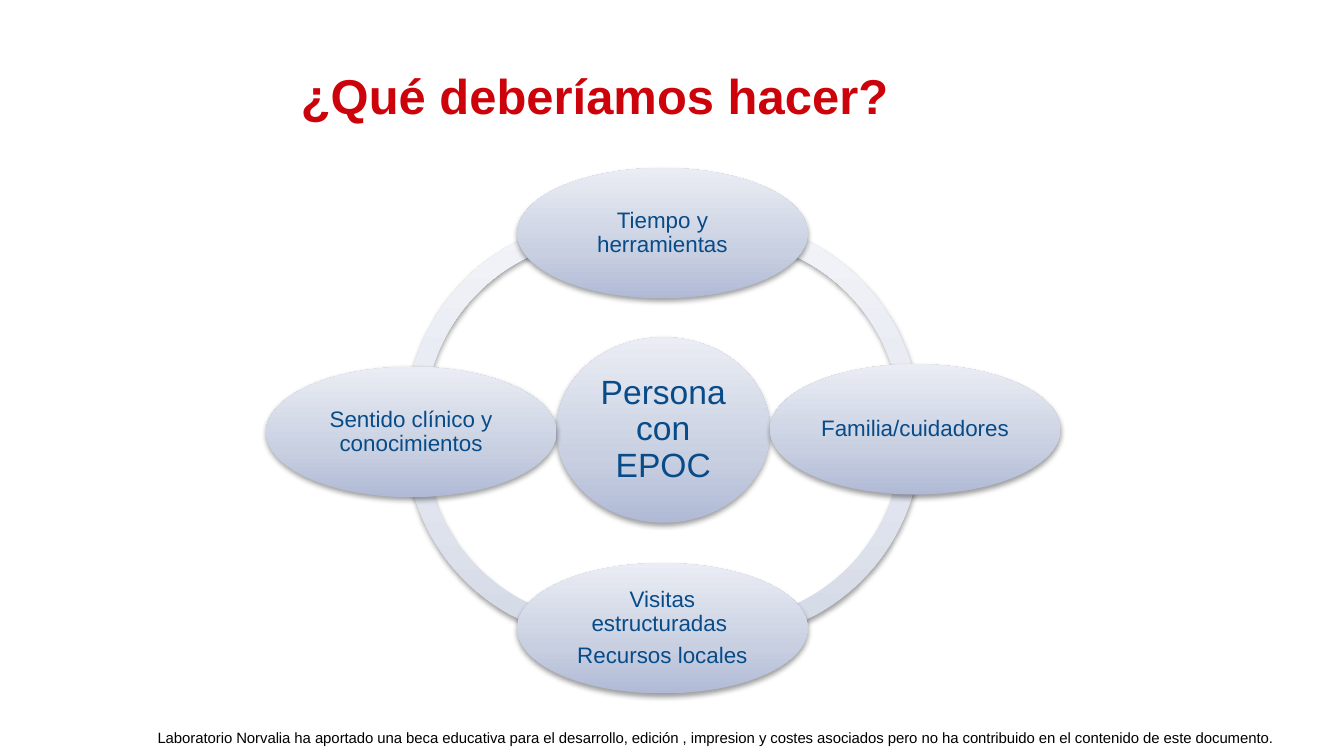
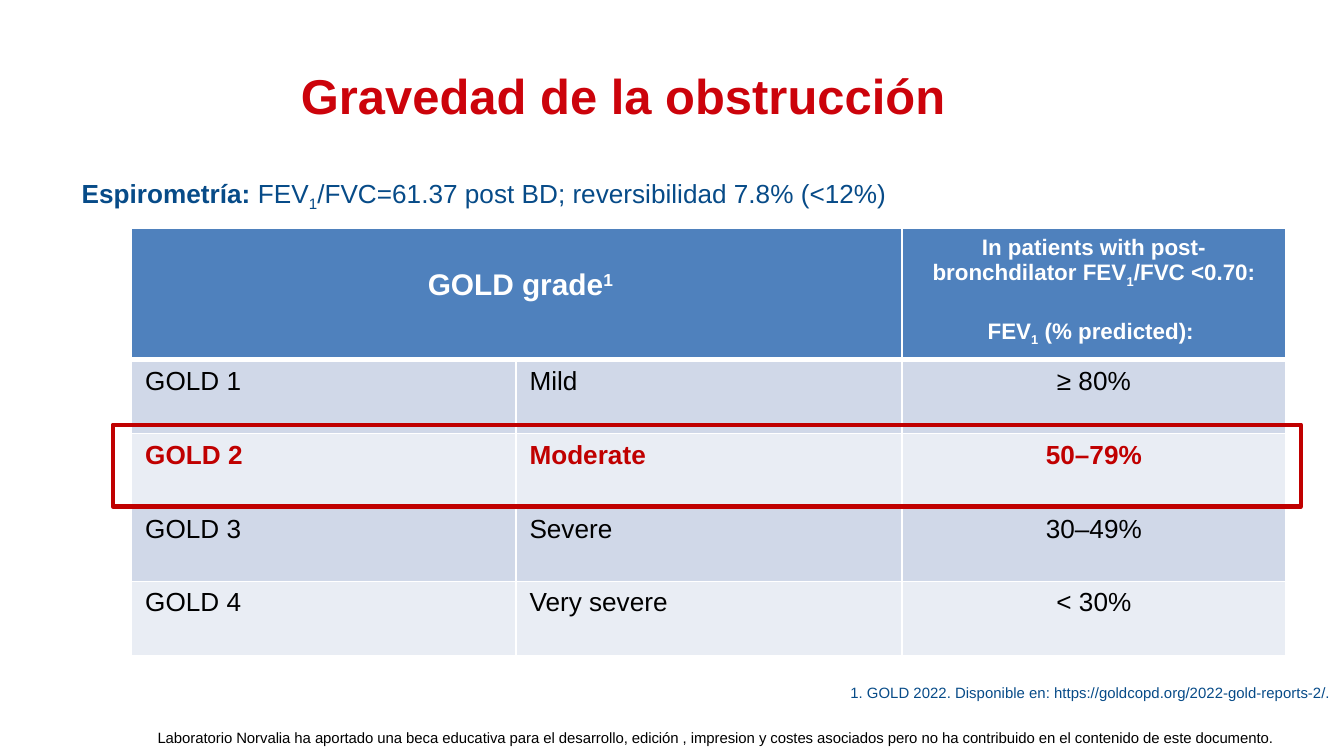
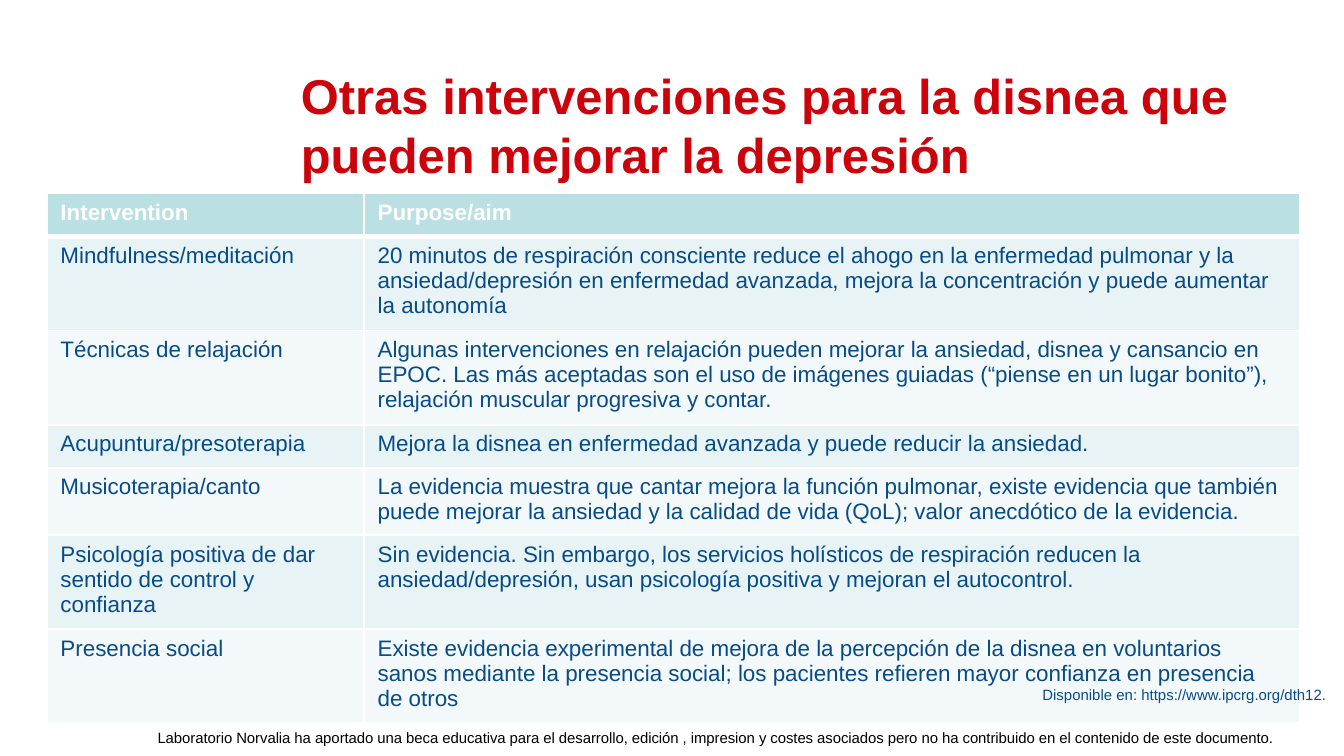
from dataclasses import dataclass

from pptx import Presentation
from pptx import util as u
from pptx.dml.color import RGBColor
from pptx.enum import shapes, text
from pptx.oxml import parse_xml
from pptx.oxml.ns import nsdecls, qn

FONT = "Arial"
NAVY, RED, DARK_RED = "074B88", "CC030B", "C00000"
BLACK, WHITE = "000000", "FFFFFF"
LEFT, CENTER, RIGHT = text.PP_ALIGN.LEFT, text.PP_ALIGN.CENTER, text.PP_ALIGN.RIGHT
SUB, SUPER = -25, 30
RING_STOPS = ((0, "D4D9E7"), (35, "E0E4EE"), (100, "F3F4F9"))
BUBBLE_STOPS = ((0, "B0BAD6"), (35, "C8CFE1"), (100, "EAEDF4"))
FOOTER = ("Laboratorio Norvalia ha aportado una beca educativa para el desarrollo, edición , "
          "impresion y costes asociados pero no ha contribuido en el contenido de este documento. ")


@dataclass(frozen=True)
class Span:
    text: str
    size: float
    color: str = NAVY
    bold: bool = False
    baseline: int = 0
    spacing: int = 0


@dataclass(frozen=True)
class Para:
    spans: tuple[Span, ...]
    align: text.PP_ALIGN = LEFT
    line: float | None = None
    before: float | None = None
    after: float | None = None


@dataclass(frozen=True)
class Area:
    left: float
    top: float
    width: float
    height: float

    def lengths(self):
        return [u.Inches(n) for n in (self.left, self.top, self.width, self.height)]


@dataclass(frozen=True)
class Arc:
    left: float
    top: float
    start: float
    end: float


@dataclass(frozen=True)
class Bubble:
    area: Area
    labels: tuple[str, ...]
    size: float = 12
    inset: float = 0.02


@dataclass(frozen=True)
class Cell:
    paras: tuple[Para, ...]
    fill: str
    margin_top: float = 0.05


def rgb(color: str) -> RGBColor:
    return RGBColor.from_string(color)


def write(frame, paras: tuple[Para, ...]) -> None:
    for index, item in enumerate(paras):
        para = frame.paragraphs[0] if index == 0 else frame.add_paragraph()
        para.alignment = item.align
        if item.line is not None:
            para.line_spacing = item.line
        if item.before is not None:
            para.space_before = u.Pt(item.before)
        if item.after is not None:
            para.space_after = u.Pt(item.after)
        for piece in item.spans:
            span = para.add_run()
            span.text = piece.text
            span.font.name = FONT
            span.font.size = u.Pt(piece.size)
            span.font.bold = piece.bold
            span.font.color.rgb = rgb(piece.color)
            properties = span.font._element
            if piece.baseline:
                properties.set("baseline", str(piece.baseline * 1000))
            if piece.spacing:
                properties.set("spc", str(piece.spacing))


def add_text(page, area: Area, *paras: Para, wrap: bool = True,
             anchor=text.MSO_ANCHOR.TOP, inset: float | None = None) -> None:
    frame = page.shapes.add_textbox(*area.lengths()).text_frame
    frame.word_wrap = wrap
    frame.vertical_anchor = anchor
    if inset is not None:
        set_insets(frame, inset)
    write(frame, paras)


def set_insets(frame, inset: float) -> None:
    frame.margin_left = frame.margin_right = u.Inches(inset)
    frame.margin_top = frame.margin_bottom = u.Inches(inset)


def add_page(deck, title: str):
    """Add a blank page with the shared footer and title."""
    page = deck.slides.add_slide(deck.slide_layouts[6])
    add_text(page, Area(1.11, 5.41, 8.46, 0.28),
             Para((Span(FOOTER, 8, BLACK, spacing=-5),), CENTER), inset=0.01)
    add_text(page, Area(2.14, 0.44, 7.86, 0.62), Para((Span(title, 26.25, RED, True),)))
    return page


def add_shaded(page, kind, area: Area, stops):
    """Add an outlineless shape with an upward gradient and a soft shadow below."""
    shape = page.shapes.add_shape(kind, *area.lengths())
    shape.line.fill.background()
    shape.shadow.inherit = False
    shape.fill.background()
    marks = "".join(f'<a:gs pos="{place * 1000}"><a:srgbClr val="{color}"/></a:gs>'
                    for place, color in stops)
    properties = shape._element.spPr
    properties.replace(properties.find(qn("a:noFill")), parse_xml(
        f'<a:gradFill {nsdecls("a")} rotWithShape="1"><a:gsLst>{marks}</a:gsLst>'
        '<a:lin ang="16200000" scaled="0"/></a:gradFill>'))
    properties.find(qn("a:effectLst")).append(parse_xml(
        f'<a:outerShdw {nsdecls("a")} blurRad="{u.Pt(3.1)}" dist="{u.Pt(1.6)}" dir="5400000" '
        'rotWithShape="0"><a:srgbClr val="000000"><a:alpha val="38000"/></a:srgbClr>'
        '</a:outerShdw>'))
    return shape


def add_arc(page, arc: Arc) -> None:
    shape = add_shaded(page, shapes.MSO_SHAPE.BLOCK_ARC,
                       Area(arc.left, arc.top, 3, 3), RING_STOPS)
    # Angles are stored in 60000ths of a degree, adjustments in 100000ths.
    shape.adjustments[0] = arc.start * 0.6
    shape.adjustments[1] = arc.end * 0.6
    shape.adjustments[2] = 0.046


def add_bubble(page, bubble: Bubble) -> None:
    frame = add_shaded(page, shapes.MSO_SHAPE.OVAL, bubble.area, BUBBLE_STOPS).text_frame
    frame.word_wrap = True
    frame.vertical_anchor = text.MSO_ANCHOR.MIDDLE
    set_insets(frame, bubble.inset)
    write(frame, tuple(Para((Span(label, bubble.size),), CENTER, 0.9, after=4.2)
                       for label in bubble.labels))


def set_borders(cell, top: float, bottom: float) -> None:
    properties = cell._tc.get_or_add_tcPr()
    for side, width in (("L", 1), ("R", 1), ("T", top), ("B", bottom)):
        properties.append(parse_xml(
            f'<a:ln{side} {nsdecls("a")} w="{u.Pt(width)}"><a:solidFill>'
            f'<a:srgbClr val="{WHITE}"/></a:solidFill></a:ln{side}>'))


def add_table(page, area: Area, widths, heights, rows) -> None:
    """Add a table; a None cell is merged into the cell on its left."""
    table = page.shapes.add_table(len(rows), len(widths), *area.lengths()).table
    table.horz_banding = False
    for column, width in zip(table.columns, widths):
        column.width = u.Inches(width)
    for row, height in zip(table.rows, heights):
        row.height = u.Inches(height)
    for r, row in enumerate(rows):
        for c, content in enumerate(row):
            cell = table.cell(r, c)
            set_borders(cell, 3 if r == 1 else 1, 3 if r == 0 else 1)
            if content is None:
                table.cell(r, c - 1).merge(cell)
                continue
            cell.fill.solid()
            cell.fill.fore_color.rgb = rgb(content.fill)
            cell.margin_top = u.Inches(content.margin_top)
            write(cell.text_frame, content.paras)


def simple_cell(label: str, size: float, color: str, fill: str,
                bold: bool = False, align=LEFT) -> Cell:
    return Cell((Para((Span(label, size, color, bold),), align),), fill)


def build_actions(deck) -> None:
    page = add_page(deck, "¿Qué deberíamos hacer?")
    for arc in (Arc(3.02, 1.64, 177.2, 286.39), Arc(3.02, 1.76, 73.66, 181.85),
                Arc(3.85, 1.76, 357.2, 106.39), Arc(3.84, 1.64, 253.66, 1.85)):
        add_arc(page, arc)
    add_bubble(page, Bubble(Area(4.14, 2.51, 1.59, 1.38), ("Persona con EPOC",), 18, 0.03))
    for left, top, *labels in (
            (3.85, 1.25, "Tiempo y herramientas"),
            (5.73, 2.71, "Familia/cuidadores"),
            (3.85, 4.19, "Visitas estructuradas ", "Recursos locales"),
            (1.98, 2.73, "Sentido clínico y conocimientos")):
        add_bubble(page, Bubble(Area(left, top, 2.16, 0.97), tuple(labels)))


def build_severity(deck) -> None:
    page = add_page(deck, "Gravedad de la obstrucción")
    header, bands = "4F81BD", ("D0D8E8", "E9EDF4")

    def head(label: str, size: float = 12, baseline: int = 0) -> Span:
        return Span(label, size, WHITE, True, baseline)

    rows = [(
        Cell((Para((head(" ", 14), head("GOLD grade", 16), head("1", 16, SUPER)), CENTER),),
             header, margin_top=0.3),
        None,
        Cell((Para((head("In patients with post-bronchdilator FEV"), head("1", 12, SUB),
                    head("/FVC <0.70:")), CENTER),
              Para((head("FEV"), head("1", 12, SUB), head(" (% predicted): ")),
                   CENTER, before=16)), header))]
    grades = (("Mild", "≥ 80%"), ("Moderate", "50–79%"),
              ("Severe", "30–49%"), ("Very severe", "< 30%"))
    for index, (name, share) in enumerate(grades):
        marked = name == "Moderate"
        rows.append(tuple(
            simple_cell(label, 14, DARK_RED if marked else BLACK, bands[index % 2], marked, align)
            for label, align in ((f"GOLD {index + 1}", LEFT), (name, LEFT), (share, CENTER))))
    add_table(page, Area(0.98, 1.7, 8.59, 3.13), (2.86, 2.87, 2.86),
              (0.91,) + (0.55,) * len(grades), rows)

    add_text(page, Area(0.51, 1.27, 6.23, 0.57), Para((
        Span("Espirometría: ", 14, bold=True), Span("FEV", 14), Span("1", 14, baseline=SUB),
        Span("/FVC=61.37 post BD; reversibilidad 7.8% (<12%)", 14))), wrap=False)
    add_text(page, Area(4.28, 5.02, 5.72, 0.25), Para((
        Span("1. GOLD 2022. Disponible en: https://goldcopd.org/2022-gold-reports-2/.", 8),),
        RIGHT, 1.2), anchor=text.MSO_ANCHOR.BOTTOM)

    highlight = page.shapes.add_shape(shapes.MSO_SHAPE.RECTANGLE,
                                      *Area(0.84, 3.16, 8.84, 0.61).lengths())
    highlight.shadow.inherit = False
    highlight.fill.background()
    highlight.line.color.rgb = rgb(DARK_RED)
    highlight.line.width = u.Pt(2.25)


def build_interventions(deck) -> None:
    page = add_page(deck, "Otras intervenciones para la disnea que pueden mejorar la depresión")
    bands = ("E7F3F4", "F3F9FA")
    interventions = (
        ("Mindfulness/meditación",
         "20 minutos de respiración consciente reduce el ahogo en la enfermedad pulmonar y la "
         "ansiedad/depresión en enfermedad avanzada, mejora la concentración y puede aumentar "
         "la autonomía"),
        ("Técnicas de relajación",
         "Algunas intervenciones en relajación pueden mejorar la ansiedad, disnea y cansancio en "
         "EPOC. Las más aceptadas son el uso de imágenes guiadas (“piense en un lugar bonito”), "
         "relajación muscular progresiva y contar."),
        ("Acupuntura/presoterapia",
         "Mejora la disnea en enfermedad avanzada y puede reducir la ansiedad."),
        ("Musicoterapia/canto",
         "La evidencia muestra que cantar mejora la función pulmonar, existe evidencia que "
         "también puede mejorar la ansiedad y la calidad de vida (QoL); valor anecdótico de la "
         "evidencia."),
        ("Psicología positiva de dar sentido de control y confianza",
         "Sin evidencia. Sin embargo, los servicios holísticos de respiración reducen la "
         "ansiedad/depresión, usan psicología positiva y mejoran el autocontrol."),
        ("Presencia social",
         "Existe evidencia experimental de mejora de la percepción de la disnea en voluntarios "
         "sanos mediante la presencia social; los pacientes refieren mayor confianza en "
         "presencia de otros"))
    rows = [[simple_cell(label, 12, WHITE, "BBE0E3", True)
             for label in ("Intervention", "Purpose/aim")]]
    rows += [[simple_cell(label, 12, NAVY, bands[index % 2]) for label in row]
             for index, row in enumerate(interventions)]
    add_table(page, Area(0.35, 1.44, 9.32, 3.74), (2.36, 6.96),
              (0.32, 0.4, 0.56, 0.32, 0.47, 0.4, 0.4), rows)
    add_text(page, Area(3.12, 5.05, 6.85, 0.24),
             Para((Span("Disponible en: https://www.ipcrg.org/dth12.", 8),), RIGHT))


def main() -> None:
    deck = Presentation()
    deck.slide_width, deck.slide_height = u.Inches(10), u.Inches(10 * 9 / 16)
    build_actions(deck)
    build_severity(deck)
    build_interventions(deck)
    deck.save("out.pptx")


if __name__ == "__main__":
    main()
